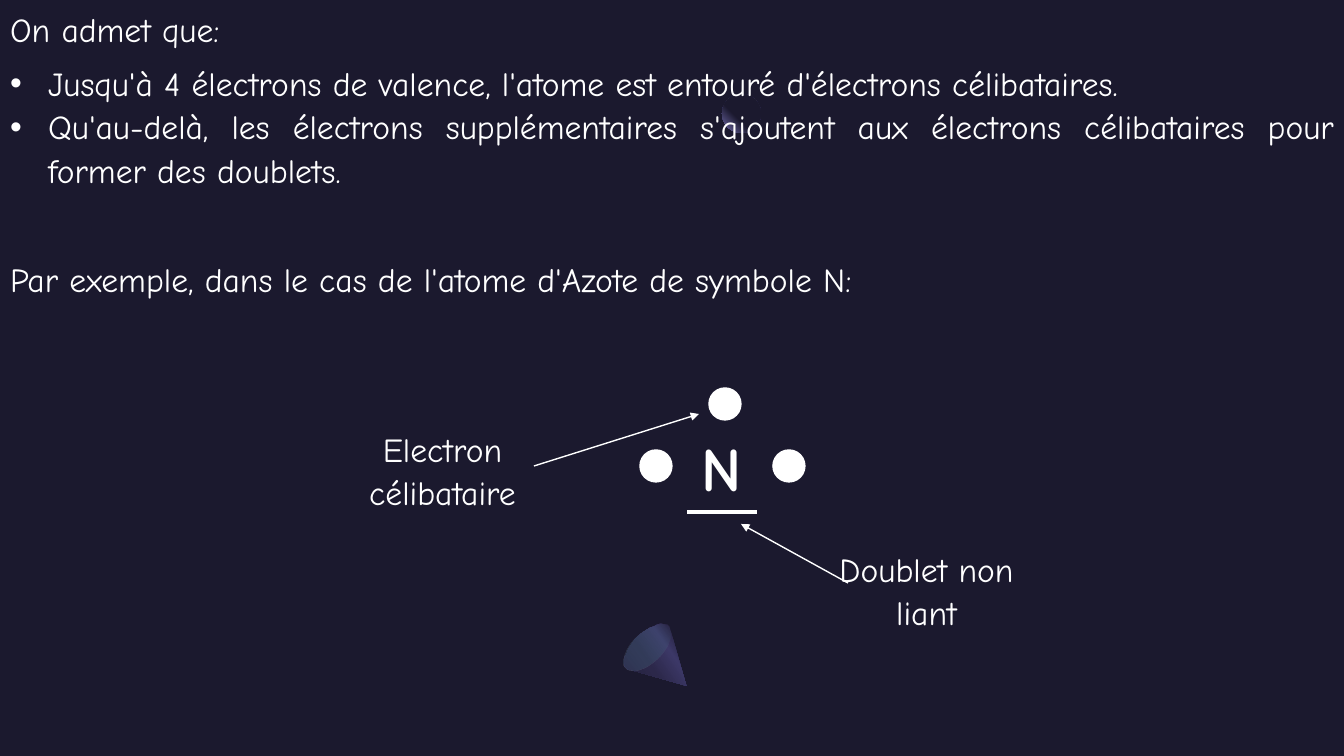
"""Build a slide on single electrons and lone pairs around a nitrogen atom."""
import math

from lxml import etree
from pptx import Presentation
from pptx.dml.color import RGBColor
from pptx.enum.shapes import MSO_CONNECTOR, MSO_SHAPE
from pptx.enum.text import MSO_ANCHOR, MSO_AUTO_SIZE, PP_ALIGN
from pptx.oxml.ns import qn
from pptx.util import Pt

EMU_PER_PX = 914400 / 100.8
OVAL, STRAIGHT = MSO_SHAPE.OVAL, MSO_CONNECTOR.STRAIGHT
TOP, MIDDLE = MSO_ANCHOR.TOP, MSO_ANCHOR.MIDDLE
CENTER, JUSTIFY = PP_ALIGN.CENTER, PP_ALIGN.JUSTIFY
NO_AUTOFIT = MSO_AUTO_SIZE.NONE
FONT = "Comic Neue"
COLORS = {
    "night": "1B192E", "white": "FFFFFF", "glow": "7771B2", "shade": "2C284A",
    "violet": "3C3867", "indigo": "454075", "mint": "5BEFC1",
}
WHITE = RGBColor.from_string(COLORS["white"])


def px(*lengths):
    """Turn pixel lengths into EMU."""
    return [round(length * EMU_PER_PX) for length in lengths]


def paint_gradient(shape, stops, angle=None):
    """Fill with (position, colour, opacity) stops, radial if no angle is given."""
    shape.shadow.inherit = False
    shape.line.fill.background()
    shape.fill.background()
    properties = shape.element.spPr
    gradient = etree.Element(qn("a:gradFill"), rotWithShape="1")
    stop_list = etree.SubElement(gradient, qn("a:gsLst"))
    for position, color, opacity in stops:
        stop = etree.SubElement(stop_list, qn("a:gs"), pos=str(position * 1000))
        tint = etree.SubElement(stop, qn("a:srgbClr"), val=COLORS[color])
        if opacity < 100:
            etree.SubElement(tint, qn("a:alpha"), val=str(opacity * 1000))
    if angle is None:
        radial = etree.SubElement(gradient, qn("a:path"), path="circle")
        etree.SubElement(radial, qn("a:fillToRect"), l="100000", b="100000")
    else:
        etree.SubElement(gradient, qn("a:lin"), ang=str(angle * 60000), scaled="0")
    properties.replace(properties.find(qn("a:noFill")), gradient)


deck = Presentation()
deck.slide_width, deck.slide_height = px(1344, 756)
page = deck.slides.add_slide(deck.slide_layouts[1])
page.background.fill.solid()
page.background.fill.fore_color.rgb = RGBColor.from_string(COLORS["night"])
shapes = page.shapes
tree = shapes.element
tree.remove(shapes.title.element)
body = page.placeholders[1]

glow = shapes.add_shape(OVAL, *px(722, 94, 39, 39))
paint_gradient(glow, [(60, "night", 100), (100, "glow", 100)])

rim = [(30 + 30 * math.cos(math.radians(angle)), 54 + 15 * math.sin(math.radians(angle)))
       for angle in range(0, 181, 10)]
outline = shapes.build_freeform(30, 0, scale=EMU_PER_PX)
outline.add_line_segments(rim, close=True)
cone = outline.convert_to_shape(*px(632, 627))
cone.rotation = 135
paint_gradient(cone, [(30, "shade", 100), (40, "violet", 100),
                      (60, "shade", 100), (100, "night", 100)], 10)

cone_base = shapes.add_shape(OVAL, *px(632, 618, 30, 59))
cone_base.rotation = 225
paint_gradient(cone_base, [(0, "indigo", 33), (100, "mint", 0)], 90)

tree.append(body.element)
body.left, body.top, body.width, body.height = px(0, 1, 1344, 303)
body.text_frame.auto_size = NO_AUTOFIT
body.text_frame.vertical_anchor = TOP
rules = [
    ("On admet que:", False, 0, 8),
    ("Jusqu'à 4 électrons de valence, l'atome est entouré d'électrons célibataires.",
     True, 0, 0),
    ("Qu'au-delà, les électrons supplémentaires s'ajoutent aux électrons célibataires "
     "pour former des doublets.", True, 0, 8),
    ("Par exemple, dans le cas de l'atome d'Azote de symbole N:", False, 39, 8),
]
body.text_frame.text = "\n".join(rule[0] for rule in rules)
hanging = px(38)[0]
for para, (_, bulleted, before, after) in zip(body.text_frame.paragraphs, rules):
    para.alignment = JUSTIFY
    para.line_spacing = 1.07
    para.space_before, para.space_after = Pt(before), Pt(after)
    settings = para._p.get_or_add_pPr()
    settings.set("marL", str(hanging if bulleted else 0))
    settings.set("indent", str(-hanging if bulleted else 0))
    if bulleted:
        etree.SubElement(settings, qn("a:buFont"), typeface="Arial")
        etree.SubElement(settings, qn("a:buChar"), char="•")
    else:
        etree.SubElement(settings, qn("a:buNone"))
    for span in para.runs:
        span.font.name, span.font.size = FONT, Pt(24)
        span.font.color.rgb = WHITE

lines = [
    ((534, 466, 699, 414), 1, True),
    ((848, 583, 741, 524), 1, True),
    ((757, 512, 687, 512), 2.25, False),
]
for ends, weight, arrow in lines:
    connector = shapes.add_connector(STRAIGHT, *px(*ends))
    connector.line.color.rgb = WHITE
    connector.line.width = Pt(weight)
    if arrow:
        etree.SubElement(connector.line._get_or_add_ln(), qn("a:tailEnd"), type="triangle")
    etree.SubElement(connector._element.spPr, qn("a:effectLst"))

labels = [
    ("Doublet non liant", (838, 546, 177, 93), 24, TOP),
    ("Electron célibataire", (329, 426, 227, 86), 24, TOP),
    ("N", (672, 419, 100, 91), 44, MIDDLE),
]
for wording, place, size, anchor in labels:
    box = shapes.add_textbox(*px(*place))
    frame = box.text_frame
    frame.word_wrap = True
    frame.vertical_anchor = anchor
    frame.margin_left = frame.margin_top = frame.margin_right = frame.margin_bottom = 0
    frame.text = wording
    para = frame.paragraphs[0]
    para.alignment = CENTER
    para.line_spacing = 1.07
    para.space_after = Pt(8)
    span = para.runs[0]
    span.font.name, span.font.size = FONT, Pt(size)
    span.font.bold = wording == "N"
    span.font.color.rgb = WHITE

for left, top in [(709, 388), (773, 450), (640, 450)]:
    electron = shapes.add_shape(OVAL, *px(left, top, 32, 32))
    electron.shadow.inherit = False
    electron.fill.solid()
    electron.fill.fore_color.rgb = WHITE
    electron.line.color.rgb = WHITE
    electron.line.width = Pt(1)

deck.save("out.pptx")
